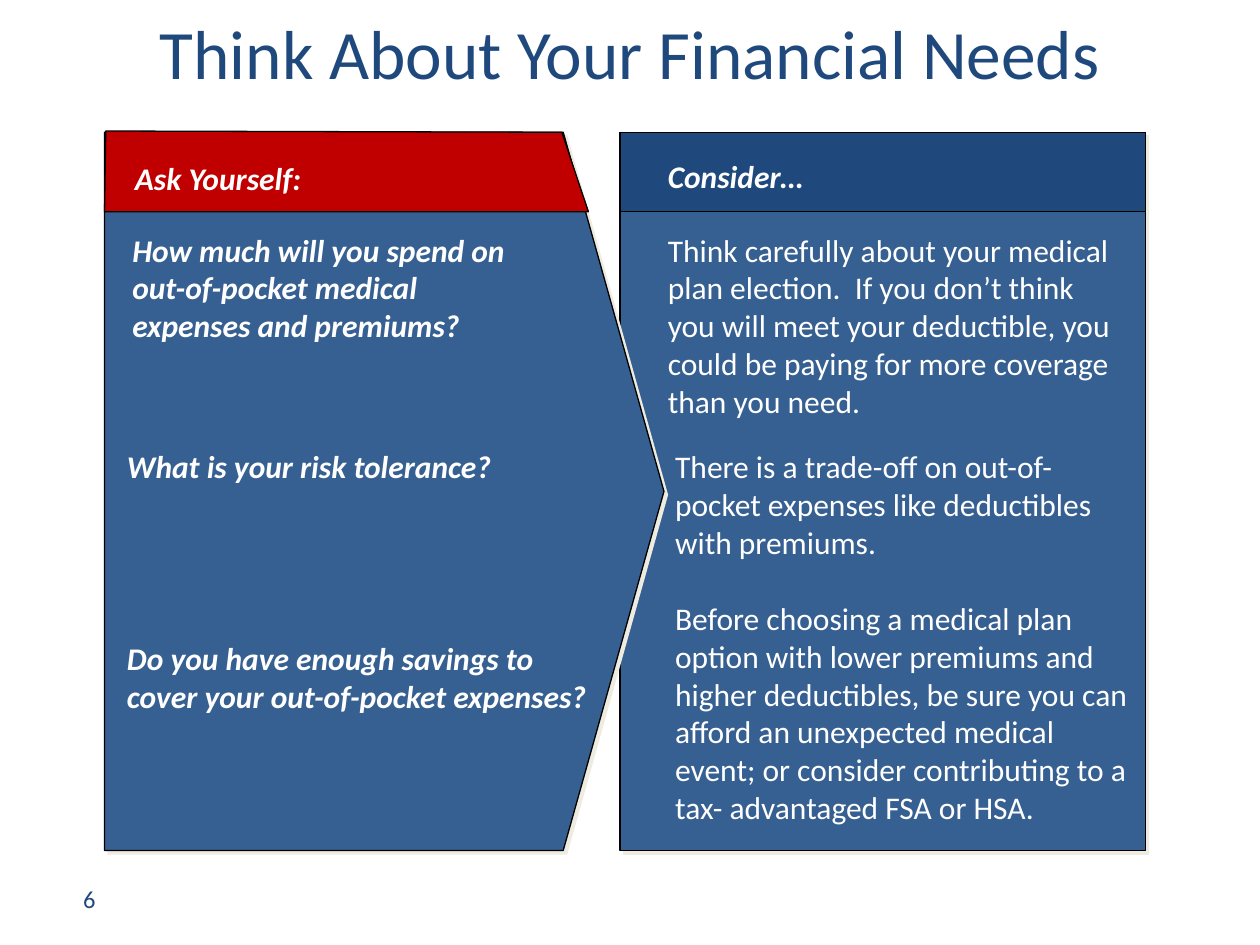
from lxml import etree
from pptx import Presentation
from pptx.dml.color import RGBColor
from pptx.enum.shapes import MSO_SHAPE
from pptx.enum.text import MSO_ANCHOR, PP_ALIGN
from pptx.oxml import parse_xml
from pptx.util import Inches, Pt

RECTANGLE, PENTAGON = MSO_SHAPE.RECTANGLE, MSO_SHAPE.PENTAGON
TOP, MIDDLE = MSO_ANCHOR.TOP, MSO_ANCHOR.MIDDLE
LEFT, CENTER = PP_ALIGN.LEFT, PP_ALIGN.CENTER

FONT = "Calibri"
NAVY, BLUE, RED = "1F497D", "376092", "C00000"
WHITE, BLACK, CREAM = "FFFFFF", "000000", "EEECE1"
DRAWING = "http://schemas.openxmlformats.org/drawingml/2006/main"
PANEL_TOP, PANEL_HEIGHT, HEADER_HEIGHT = 1.05, 5.7, 0.63


def color(value):
    return RGBColor.from_string(value)


def paint(shape, fill):
    shape.shadow.inherit = False
    shape.fill.solid()
    shape.fill.fore_color.rgb = color(fill)
    shape.line.color.rgb = color(BLACK)
    shape.line.width = Pt(0.75)


def add_shadow(shape):
    effects = shape._element.spPr.find(f"{{{DRAWING}}}effectLst")
    effects.append(parse_xml(
        f'<a:outerShdw xmlns:a="{DRAWING}" dist="{Pt(2.8)}" dir="2700000" '
        f'algn="ctr" rotWithShape="0"><a:srgbClr val="{CREAM}"/></a:outerShdw>'))


def add_panel(slide, kind, box, fill):
    shape = slide.shapes.add_shape(kind, *map(Inches, box))
    paint(shape, fill)
    return shape


def add_text(slide, box, paragraphs, size=18, text_color=WHITE, emphasis=False,
             gap=0, inset=True, align=LEFT, anchor=TOP):
    frame = slide.shapes.add_textbox(*map(Inches, box)).text_frame
    frame.word_wrap = True
    frame.vertical_anchor = anchor
    if not inset:
        frame.margin_left = frame.margin_right = 0
        frame.margin_top = frame.margin_bottom = 0
    for index, text in enumerate(paragraphs):
        paragraph = frame.paragraphs[0] if index == 0 else frame.add_paragraph()
        paragraph.alignment = align
        if index:
            paragraph.space_before = Pt(gap)
        run = paragraph.add_run()
        run.text = text
        run.font.name = FONT
        run.font.size = Pt(size)
        run.font.color.rgb = color(text_color)
        run.font.bold = run.font.italic = emphasis


def add_consider_panel(slide, left, width):
    body = add_panel(slide, RECTANGLE, (left, PANEL_TOP, width, PANEL_HEIGHT), BLUE)
    add_shadow(body)
    add_panel(slide, RECTANGLE, (left, PANEL_TOP, width, HEADER_HEIGHT), NAVY)


def add_question_panel(slide, left, width):
    body = add_panel(slide, PENTAGON, (left, PANEL_TOP, width, PANEL_HEIGHT), BLUE)
    body.adjustments[0] = 0.18
    add_shadow(body)
    # Header follows the slanted edge of the arrow
    bottom = PANEL_TOP + HEADER_HEIGHT
    corners = [(left, bottom), (left + 3.84, bottom),
               (left + 3.63, PANEL_TOP), (left + 0.01, PANEL_TOP - 0.01)]
    points = [(Inches(x), Inches(y)) for x, y in corners]
    builder = slide.shapes.build_freeform(*points[0])
    builder.add_line_segments(points[1:], close=True)
    paint(builder.convert_to_shape(), RED)


def add_question_text(slide, left):
    add_text(slide, (left + 0.24, 1.26, 3.09, 0.3), ["Ask Yourself:"],
             emphasis=True, inset=False)
    add_text(slide, (left + 0.22, 1.83, 3.12, 1.21),
             ["How much will you spend on out-of-pocket medical expenses and premiums?"],
             emphasis=True, inset=False)
    add_text(slide, (left + 0.08, 3.5, 4, 2.83),
             ["What is your risk tolerance?",
              "Do you have enough savings to cover your out-of-pocket expenses?"],
             emphasis=True, gap=88)


def add_consider_text(slide, left):
    add_text(slide, (left + 0.38, 1.25, 3.09, 0.3), ["Consider…"],
             emphasis=True, inset=False)
    add_text(slide, (left + 0.38, 1.83, 3.59, 1.51),
             ["Think carefully about your medical plan election.  If you don’t think "
              "you will meet your deductible, you could be paying for more coverage "
              "than you need."], inset=False)
    add_text(slide, (left + 0.34, 3.5, 3.82, 3.2),
             ["There is a trade-off on out-of-pocket expenses like deductibles "
              "with premiums.",
              "Before choosing a medical plan option with lower premiums and higher "
              "deductibles, be sure you can afford an unexpected medical event; or "
              "consider contributing to a tax- advantaged FSA or HSA."], gap=22)


def build_slide(presentation):
    slide = presentation.slides.add_slide(presentation.slide_layouts[6])
    question_left, consider_left = 0.83, 4.92
    # Title
    add_text(slide, (0, 0, 10, 0.82), ["Think About Your Financial Needs"],
             size=39.6, text_color=NAVY, align=CENTER, anchor=MIDDLE)
    # Panels, with the arrow overlapping the right one
    add_consider_panel(slide, consider_left, 4.17)
    add_question_panel(slide, question_left, 4.44)
    # Panel text
    add_question_text(slide, question_left)
    add_consider_text(slide, consider_left)
    # Page number
    add_text(slide, (0.25, 6.93, 0.92, 0.4), ["6"], size=14, text_color=NAVY,
             align=CENTER, anchor=MIDDLE)


def main():
    presentation = Presentation()
    presentation.slide_width, presentation.slide_height = Inches(10), Inches(7.5)
    build_slide(presentation)
    presentation.save("out.pptx")


if __name__ == "__main__":
    main()
